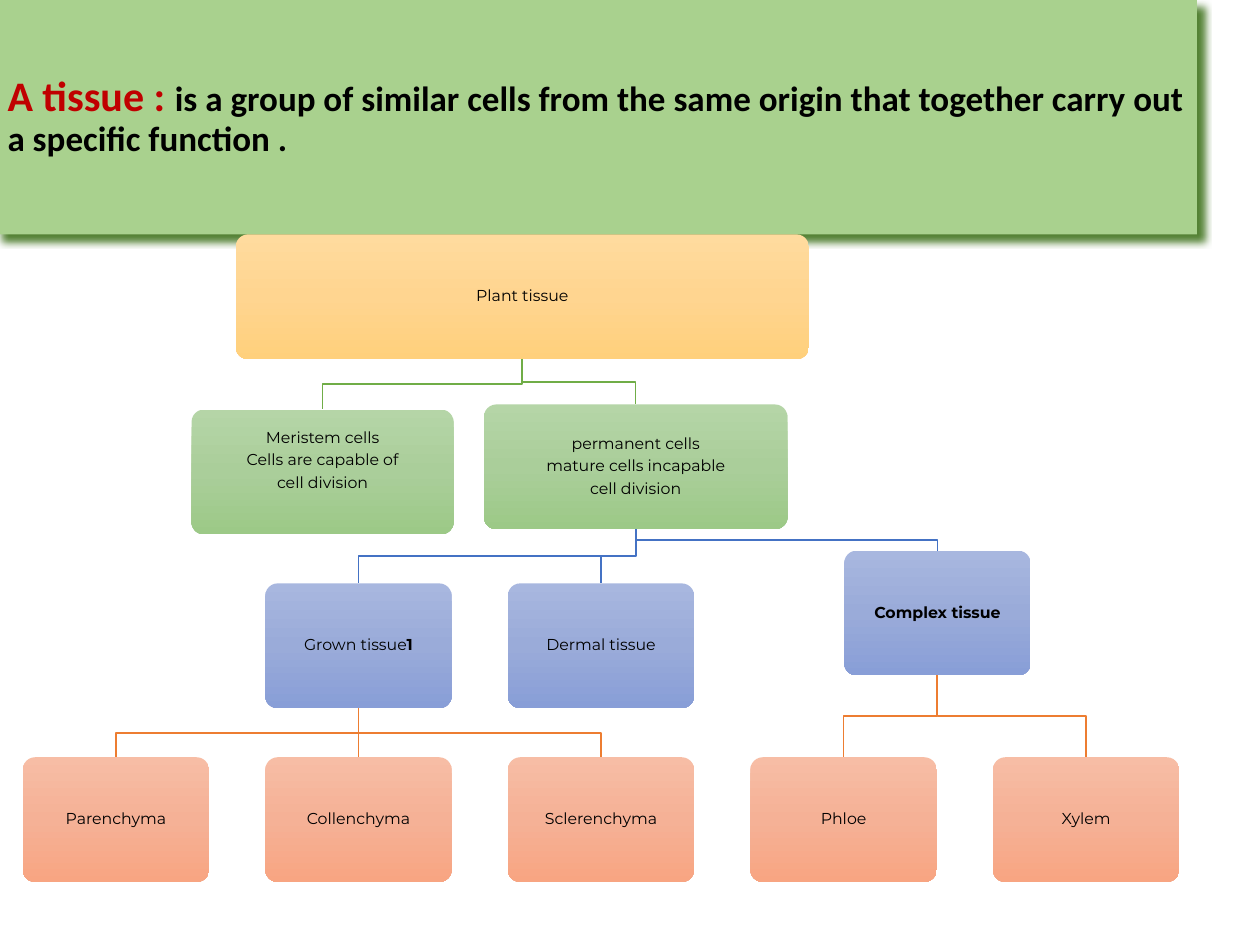
"""Build a slide that defines a tissue and shows the tree of plant tissues."""
from copy import deepcopy
from dataclasses import dataclass

from lxml import etree
from pptx import Presentation
from pptx.dml.color import RGBColor
from pptx.enum.shapes import MSO_CONNECTOR as Connector, MSO_SHAPE as Shape
from pptx.enum.text import MSO_ANCHOR as Anchor, MSO_AUTO_SIZE as AutoSize, PP_ALIGN as Align
from pptx.oxml.ns import qn
from pptx.util import Inches, Pt


@dataclass(frozen=True)
class Theme:
    banner: str = "A9D18E"
    banner_shadow: str = "548235"
    term: str = "C00000"
    ink: str = "000000"
    title_font: str = "Calibri"
    label_font: str = "Montserrat"
    term_size: float = 24
    definition_size: float = 20
    label_size: float = 9
    label_gap: float = 3.15
    gradients: tuple = (
        ("FFDB9E", "FFD590", "FFD07C"),
        ("B5D5A7", "AACE9A", "9CC987"),
        ("A8B7DF", "9AABD9", "889ED7"),
        ("F7BDA5", "F5B196", "F8A582"),
    )
    branches: tuple = (None, "70AD47", "4472C4", "ED7D31")


def add_run(paragraph, text, *, size, font, color=Theme.ink, bold=False):
    run = paragraph.add_run()
    run.text = text
    run.font.size = Pt(size)
    run.font.name = font
    run.font.bold = bold
    run.font.color.rgb = RGBColor.from_string(color)


theme = Theme()
deck = Presentation()
deck.slide_width, deck.slide_height = Inches(10), Inches(7.5)
slide = deck.slides.add_slide(deck.slide_layouts[5])

definition = slide.shapes.title
definition.left, definition.top = Inches(-0.04), Inches(0)
definition.width, definition.height = Inches(9.54), Inches(1.86)
definition.fill.solid()
definition.fill.fore_color.rgb = RGBColor.from_string(theme.banner)
effects = etree.SubElement(definition._element.spPr, qn("a:effectLst"))
shadow = etree.SubElement(effects, qn("a:outerShdw"), blurRad="50800", dist="76200",
                          dir="2700000", algn="tl", rotWithShape="0")
etree.SubElement(shadow, qn("a:srgbClr"), val=theme.banner_shadow)
definition.text_frame.auto_size = AutoSize.NONE
definition.text_frame.word_wrap = True
definition.text_frame.vertical_anchor = Anchor.MIDDLE
sentence = definition.text_frame.paragraphs[0]
sentence.alignment = Align.LEFT
sentence.line_spacing = 0.9
add_run(sentence, "A tissue : ", size=theme.term_size, font=theme.title_font,
        color=theme.term, bold=True)
add_run(sentence, "is a group of similar cells from the same origin that together "
        "carry out a specific function .", size=theme.definition_size,
        font=theme.title_font, bold=True)

columns = [0.18 + 1.925 * step for step in range(5)]
box_width, box_height, padding = 1.48, 0.99, 0.07
leaf_top = 6.01
tissues = [
    ("plant", None, 0, 1.87, 1.86, 4.55, [[("Plant tissue", False)]]),
    ("meristem", "plant", 1, 1.52, 3.25, 2.08,
     [[("Meristem cells", False)], [("Cells are capable of", False)], [("cell division", False)]]),
    ("permanent", "plant", 1, 3.84, 3.21, 2.41,
     [[("permanent cells", False)], [("mature cells incapable", False)],
      [("cell division", False)]]),
    ("grown", "permanent", 2, columns[1], 4.63, box_width,
     [[("Grown tissue", False), ("1", True)]]),
    ("dermal", "permanent", 2, columns[2], 4.63, box_width, [[("Dermal tissue", False)]]),
    ("complex", "permanent", 2, 6.7, 4.37, box_width, [[("Complex tissue", True)]]),
]
leaves = [("Parenchyma", "grown"), ("Collenchyma", "grown"), ("Sclerenchyma", "grown"),
          ("Phloe", "complex"), ("Xylem", "complex")]
tissues += [(leaf, parent, 3, left, leaf_top, box_width, [[(leaf, False)]])
            for (leaf, parent), left in zip(leaves, columns)]

boxes = {}
for name, parent, level, left, top, width, lines in tissues:
    box = slide.shapes.add_shape(Shape.ROUNDED_RECTANGLE, Inches(left), Inches(top),
                                 Inches(width), Inches(box_height))
    boxes[name] = box
    box.adjustments[0] = 0.1
    box.shadow.inherit = False
    box.line.fill.background()
    box.fill.gradient()
    box.fill.gradient_angle = 270
    stop_list = box._element.spPr.find(".//" + qn("a:gsLst"))
    stop_list.insert(1, deepcopy(stop_list[0]))
    for stop, position, color in zip(box.fill.gradient_stops, (0, 0.5, 1),
                                     theme.gradients[level]):
        stop.position = position
        stop.color.rgb = RGBColor.from_string(color)

    label = box.text_frame
    label.word_wrap = True
    label.vertical_anchor = Anchor.MIDDLE
    label.margin_left = label.margin_right = label.margin_top = Inches(padding)
    label.margin_bottom = Inches(padding + 0.18 if name == "meristem" else padding)
    for index, pieces in enumerate(lines):
        line = label.add_paragraph() if index else label.paragraphs[0]
        line.alignment = Align.CENTER
        line.line_spacing = 0.9
        line.space_after = Pt(theme.label_gap)
        for text, bold in pieces:
            add_run(line, text, size=theme.label_size, font=theme.label_font, bold=bold)

    if parent is None:
        continue
    source = boxes[parent]
    start_x, start_y = source.left + source.width // 2, source.top + source.height
    end_x, end_y = box.left + box.width // 2, box.top
    if start_x == end_x:
        branch = slide.shapes.add_connector(Connector.STRAIGHT, start_x, start_y, end_x, end_y)
        branch.begin_connect(source, 2)
        branch.end_connect(box, 0)
    else:
        bend_y = (start_y + end_y) // 2
        outline = slide.shapes.build_freeform(start_x, start_y)
        outline.add_line_segments([(start_x, bend_y), (end_x, bend_y), (end_x, end_y)],
                                  close=False)
        branch = outline.convert_to_shape()
        branch.fill.background()
    branch.line.color.rgb = RGBColor.from_string(theme.branches[level])
    branch.line.width = Pt(1)
    etree.SubElement(branch._element.spPr, qn("a:effectLst"))

deck.save("out.pptx")
